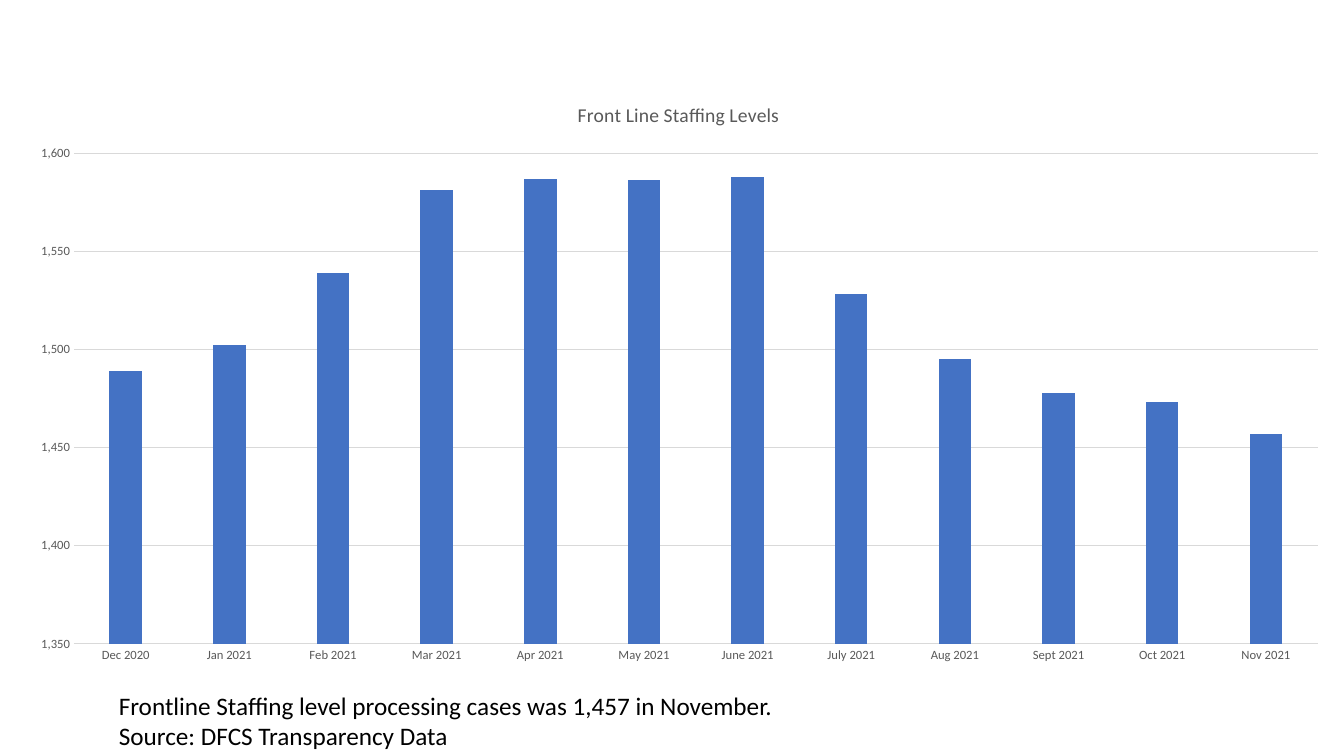
from typing import NamedTuple

from lxml import etree
from pptx import Presentation
from pptx import util as u
from pptx.chart import data as chart_data
from pptx.dml import color
from pptx.enum import chart as chart_enum
from pptx.enum import text
from pptx.oxml import ns

FONT = "Calibri"
COLORS = {"bar": "4472C4", "label": "595959", "rule": "D9D9D9", "note": "000000"}


class MonthlyStaffing(NamedTuple):
    month: str
    workers: int


STAFFING = [
    MonthlyStaffing("Dec 2020", 1489),
    MonthlyStaffing("Jan 2021", 1502),
    MonthlyStaffing("Feb 2021", 1539),
    MonthlyStaffing("Mar 2021", 1581),
    MonthlyStaffing("Apr 2021", 1587),
    MonthlyStaffing("May 2021", 1586),
    MonthlyStaffing("June 2021", 1588),
    MonthlyStaffing("July 2021", 1528),
    MonthlyStaffing("Aug 2021", 1495),
    MonthlyStaffing("Sept 2021", 1478),
    MonthlyStaffing("Oct 2021", 1473),
    MonthlyStaffing("Nov 2021", 1457),
]
NOTES = [
    "Frontline Staffing level processing cases was 1,457 in November.",
    "Source: DFCS Transparency Data",
]
PLOT_LAYOUT = {
    "layoutTarget": "inner", "xMode": "edge", "yMode": "edge",
    "x": "0.045", "y": "0.122", "w": "0.936", "h": "0.827",
}


def rgb(name: str) -> color.RGBColor:
    return color.RGBColor.from_string(COLORS[name])


def style_font(font, size: float, color_name: str) -> None:
    font.name = FONT
    font.size = u.Pt(size)
    font.bold = False
    font.color.rgb = rgb(color_name)


def style_rule(line) -> None:
    line.color.rgb = rgb("rule")
    line.width = u.Pt(0.75)


def place_plot(chart) -> None:
    plot_area = chart._chartSpace.chart.plotArea
    for layout in plot_area.findall(ns.qn("c:layout")):
        plot_area.remove(layout)
    layout = etree.Element(ns.qn("c:layout"))
    manual = etree.SubElement(layout, ns.qn("c:manualLayout"))
    for tag, value in PLOT_LAYOUT.items():
        etree.SubElement(manual, ns.qn(f"c:{tag}")).set("val", value)
    plot_area.insert(0, layout)


def add_staffing_chart(slide) -> None:
    staffing_data = chart_data.CategoryChartData(number_format="#,##0")
    staffing_data.categories = [entry.month for entry in STAFFING]
    staffing_data.add_series("Series 1", [entry.workers for entry in STAFFING])
    chart = slide.shapes.add_chart(
        chart_enum.XL_CHART_TYPE.COLUMN_CLUSTERED,
        u.Inches(0.14), u.Inches(0.8), u.Inches(13.18), u.Inches(5.89),
        staffing_data,
    ).chart
    style_font(chart.font, 10, "note")
    chart.has_legend = False
    chart.has_title = True
    title_paragraph = chart.chart_title.text_frame.paragraphs[0]
    title_paragraph.text = "Front Line Staffing Levels"
    style_font(title_paragraph.runs[0].font, 14, "label")
    chart.chart_title.include_in_layout = False

    for axis in (chart.category_axis, chart.value_axis):
        axis.major_tick_mark = chart_enum.XL_TICK_MARK.NONE
        axis.minor_tick_mark = chart_enum.XL_TICK_MARK.NONE
        style_font(axis.tick_labels.font, 9, "label")
    style_rule(chart.category_axis.format.line)

    value_axis = chart.value_axis
    value_axis.minimum_scale = 1350
    value_axis.maximum_scale = 1600
    value_axis.major_unit = 50
    value_axis.tick_labels.number_format = "#,##0"
    value_axis.tick_labels.number_format_is_linked = False
    value_axis.format.line.fill.background()
    style_rule(value_axis.major_gridlines.format.line)

    plot = chart.plots[0]
    plot.vary_by_categories = False
    plot.gap_width = 219
    plot.overlap = -27
    fill = plot.series[0].format.fill
    fill.solid()
    fill.fore_color.rgb = rgb("bar")
    place_plot(chart)


def add_notes_box(slide) -> None:
    box = slide.shapes.add_textbox(
        u.Inches(1.08), u.Inches(6.8), u.Inches(7.12), u.Inches(0.71)
    )
    frame = box.text_frame
    frame.word_wrap = True
    frame.auto_size = text.MSO_AUTO_SIZE.SHAPE_TO_FIT_TEXT
    frame.text = "\n".join(NOTES)
    for paragraph in frame.paragraphs:
        style_font(paragraph.runs[0].font, 18, "note")


def main() -> None:
    presentation = Presentation()
    presentation.slide_width = u.Inches(13.33)
    presentation.slide_height = u.Inches(7.5)
    slide = presentation.slides.add_slide(presentation.slide_layouts[6])
    add_staffing_chart(slide)
    add_notes_box(slide)
    presentation.save("out.pptx")


if __name__ == "__main__":
    main()
